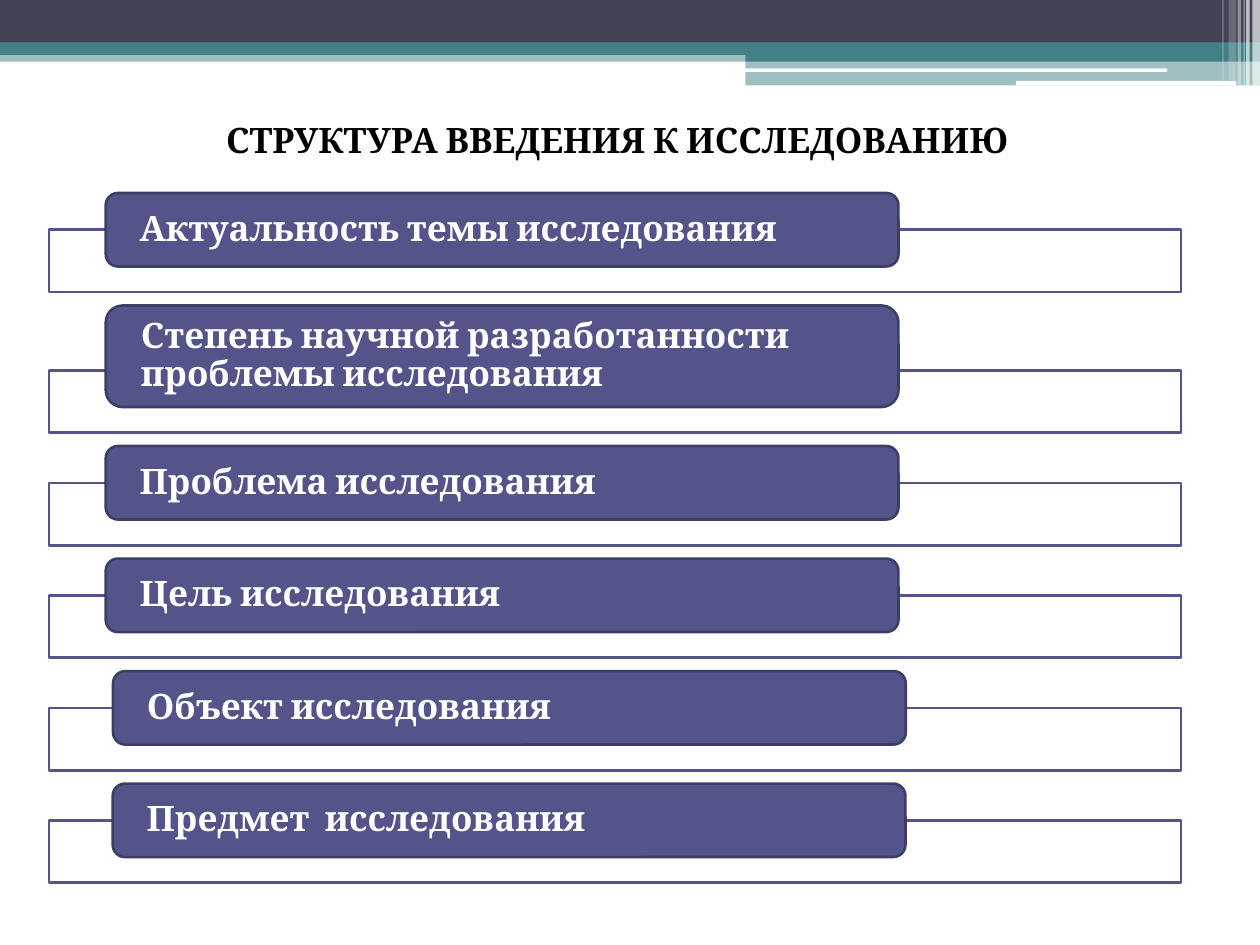
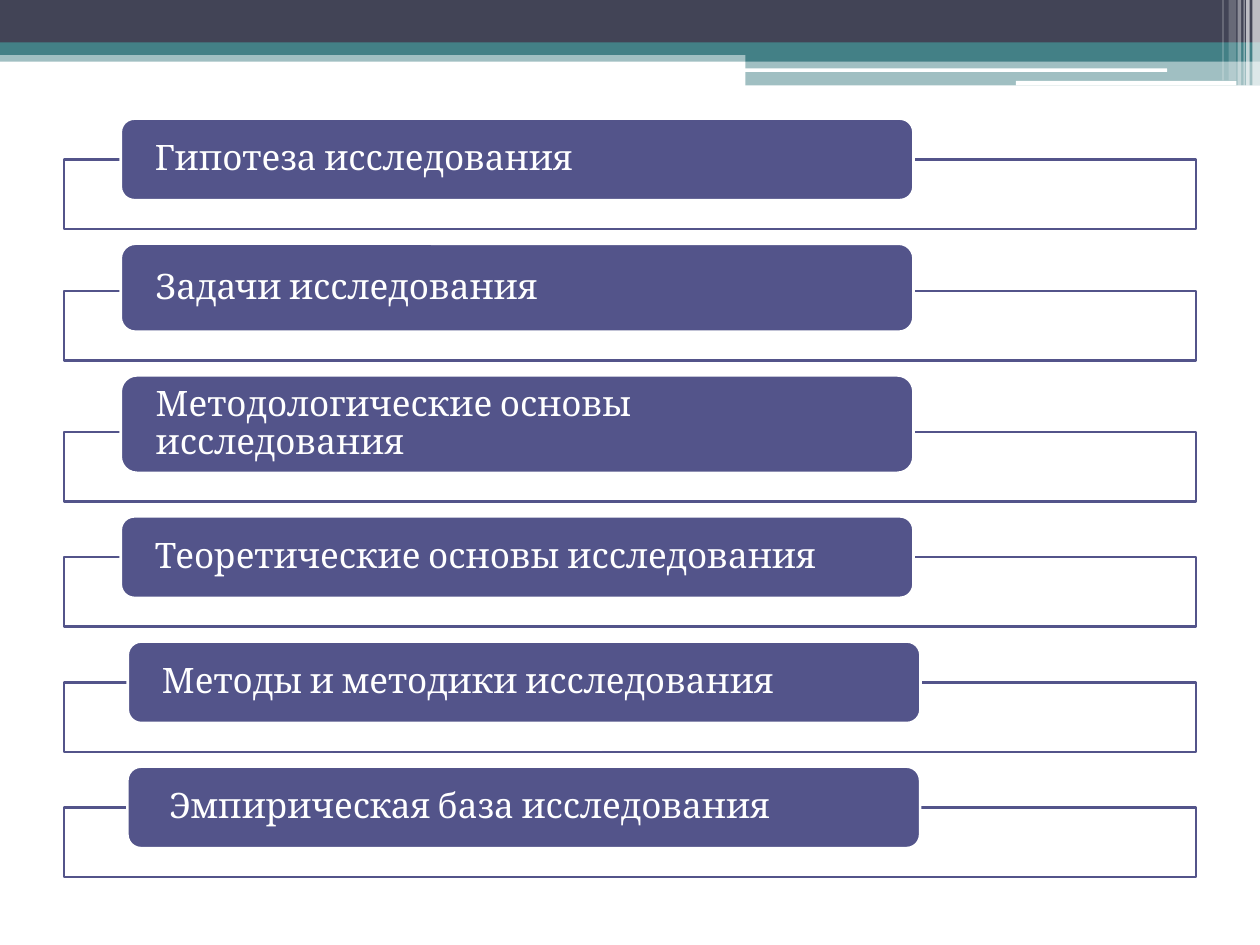
from collections import namedtuple

from lxml.etree import SubElement
from pptx import Presentation
from pptx.dml.color import RGBColor
from pptx.enum.shapes import MSO_SHAPE as Shape
from pptx.enum.text import MSO_ANCHOR as Anchor, MSO_AUTO_SIZE as AutoSize, PP_ALIGN as Align
from pptx.oxml.ns import qn
from pptx.util import Pt

SLATE = RGBColor(0x42, 0x44, 0x56)
TEAL = RGBColor(0x43, 0x80, 0x86)
INDIGO = RGBColor(0x53, 0x54, 0x8A)
DARK_INDIGO = RGBColor(0x3D, 0x3E, 0x66)
WHITE = RGBColor(0xFF, 0xFF, 0xFF)
BLACK = RGBColor(0x00, 0x00, 0x00)

FONT = "Cambria"
TEXT_SIZE = 20
LINE_WIDTH = 1.5
TITLE_ONLY, BLANK = 5, 6

Box = namedtuple("Box", "left top width height")
ListStyle = namedtuple("ListStyle", "label_height frame_height gap border bold")
Entry = namedtuple("Entry", "text height shift", defaults=(None, 0))

PAGE_BOX = Box(0, 0, 720, 540)
HEADER_BOX = Box(0, 0, 720, 49)
TITLE_BOX = Box(13.5, 39.5, 678.5, 80)
LABEL_INDENT = 32.4
LABEL_WIDTH = 453
LABEL_INSET = 17.3

INTRO_STYLE = ListStyle(42, 35.7, 7.6, DARK_INDIGO, True)
INTRO_ENTRIES = [
    Entry("Актуальность темы исследования"),
    Entry("Степень научной разработанности проблемы исследования", height=58),
    Entry("Проблема исследования"),
    Entry("Цель исследования"),
    Entry("Объект исследования", shift=4.2),
    Entry("Предмет  исследования", shift=4),
]

METHOD_STYLE = ListStyle(46.6, 39.8, 8.4, WHITE, False)
METHOD_ENTRIES = [
    Entry("Гипотеза исследования"),
    Entry("Задачи исследования", height=50.3),
    Entry("Методологические основы исследования", height=55.7),
    Entry("Теоретические основы исследования"),
    Entry("Методы и методики исследования", shift=4),
    Entry(" Эмпирическая база исследования", shift=3.8),
]


def apply(target, values):
    for name, value in values.items():
        setattr(target, name, value)


def place(box):
    return {name: Pt(value) for name, value in box._asdict().items()}


def add_block(page, kind, box, colour, opacity=100, border=None):
    """Add a filled preset shape, with a line only if a border colour is given."""
    block = page.shapes.add_shape(kind, *place(box).values())
    block.shadow.inherit = False
    block.fill.solid()
    block.fill.fore_color.rgb = colour
    if opacity < 100:
        srgb = block.element.spPr.find(qn("a:solidFill")).find(qn("a:srgbClr"))
        SubElement(srgb, qn("a:alpha"), val=str(opacity * 1000))
    if border is None:
        block.line.fill.background()
    else:
        block.line.color.rgb = border
        block.line.width = Pt(LINE_WIDTH)
    return block


def write(frame, text, frame_format, para_format, font_format, colour):
    apply(frame, {"word_wrap": True, "vertical_anchor": Anchor.MIDDLE, **frame_format})
    para = frame.paragraphs[0]
    apply(para, para_format)
    span = para.add_run()
    span.text = text
    apply(span.font, {"name": FONT, "size": Pt(TEXT_SIZE), **font_format})
    span.font.color.rgb = colour


def add_header(page, box):
    """Draw the top bands, the white cuts and the light stripes at the right end."""
    split = 426
    right_width = box.width - split
    bands = [
        (0, 28.8, box.width, 6.5, TEAL, 50),
        (0, 0, box.width, 24.5, SLATE, 100),
        (0, 24.2, box.width, 7.2, TEAL, 100),
        (split, 28.1, right_width, 7.2, TEAL, 100),
        (split, 35.3, right_width, 13.5, TEAL, 50),
    ]
    cuts = [(425.7, 39.1, 241.2, 2), (580.5, 46.2, 126, 2.6)]
    stripes = [
        (715.7, 4.3, 49, 65), (712.1, 2, 49, 65), (710.6, 0.7, 49, 60),
        (707.2, 2, 49, 40), (702.1, 4.3, 46, 20), (698.5, 0.7, 46, 30),
    ]

    def add_part(kind, left, top, width, height, colour, opacity=100):
        part_box = Box(box.left + left, box.top + top, width, height)
        return add_block(page, kind, part_box, colour, opacity)

    parts = [add_part(Shape.RECTANGLE, *band) for band in bands]
    parts += [add_part(Shape.ROUNDED_RECTANGLE, *cut, WHITE) for cut in cuts]
    parts += [add_part(Shape.RECTANGLE, left, 0, width, height, WHITE, opacity)
              for left, width, height, opacity in stripes]
    return parts


def move_to_master(deck, parts):
    """Make the parts show on every slide by moving them to the slide master."""
    tree = deck.slide_master.shapes.element
    for number, part in enumerate(parts, start=100):
        part.element.nvSpPr.cNvPr.set("id", str(number))
        tree.append(part.element)


def set_title(page, box, text):
    title = page.shapes.title
    apply(title, place(box))
    write(title.text_frame, text, {"auto_size": AutoSize.NONE},
          {"alignment": Align.CENTER}, {"bold": True}, BLACK)


def add_outline_list(page, box, entries, style):
    """Stack frames downwards, each with a label whose lower half overlaps it."""
    overlap = style.label_height / 2
    label_top = box.top
    for entry in entries:
        label_height = entry.height or style.label_height
        frame_top = label_top + label_height - overlap
        frame_box = Box(box.left, frame_top, box.width, style.frame_height)
        label_box = Box(box.left + LABEL_INDENT + entry.shift, label_top,
                        LABEL_WIDTH, label_height)
        add_block(page, Shape.RECTANGLE, frame_box, WHITE, 90, INDIGO)
        label = add_block(page, Shape.ROUNDED_RECTANGLE, label_box, INDIGO,
                          border=style.border)
        write(label.text_frame, entry.text,
              {"margin_left": Pt(LABEL_INSET), "margin_right": Pt(LABEL_INSET),
               "margin_top": 0, "margin_bottom": 0},
              {"alignment": Align.LEFT, "line_spacing": 0.9},
              {"bold": style.bold}, WHITE)
        label_top = frame_top + style.frame_height + style.gap


def add_page(deck, layout):
    return deck.slides.add_slide(deck.slide_layouts[layout])


def main():
    deck = Presentation()
    apply(deck, {"slide_width": Pt(PAGE_BOX.width), "slide_height": Pt(PAGE_BOX.height)})

    intro = add_page(deck, TITLE_ONLY)
    move_to_master(deck, add_header(intro, HEADER_BOX))
    add_outline_list(intro, Box(28, 110.3, 646.8, 395), INTRO_ENTRIES, INTRO_STYLE)
    set_title(intro, TITLE_BOX, "СТРУКТУРА ВВЕДЕНИЯ К ИССЛЕДОВАНИЮ")

    methods = add_page(deck, BLANK)
    add_outline_list(methods, Box(36.6, 67.8, 646.8, 433), METHOD_ENTRIES, METHOD_STYLE)

    deck.save("out.pptx")


if __name__ == "__main__":
    main()
